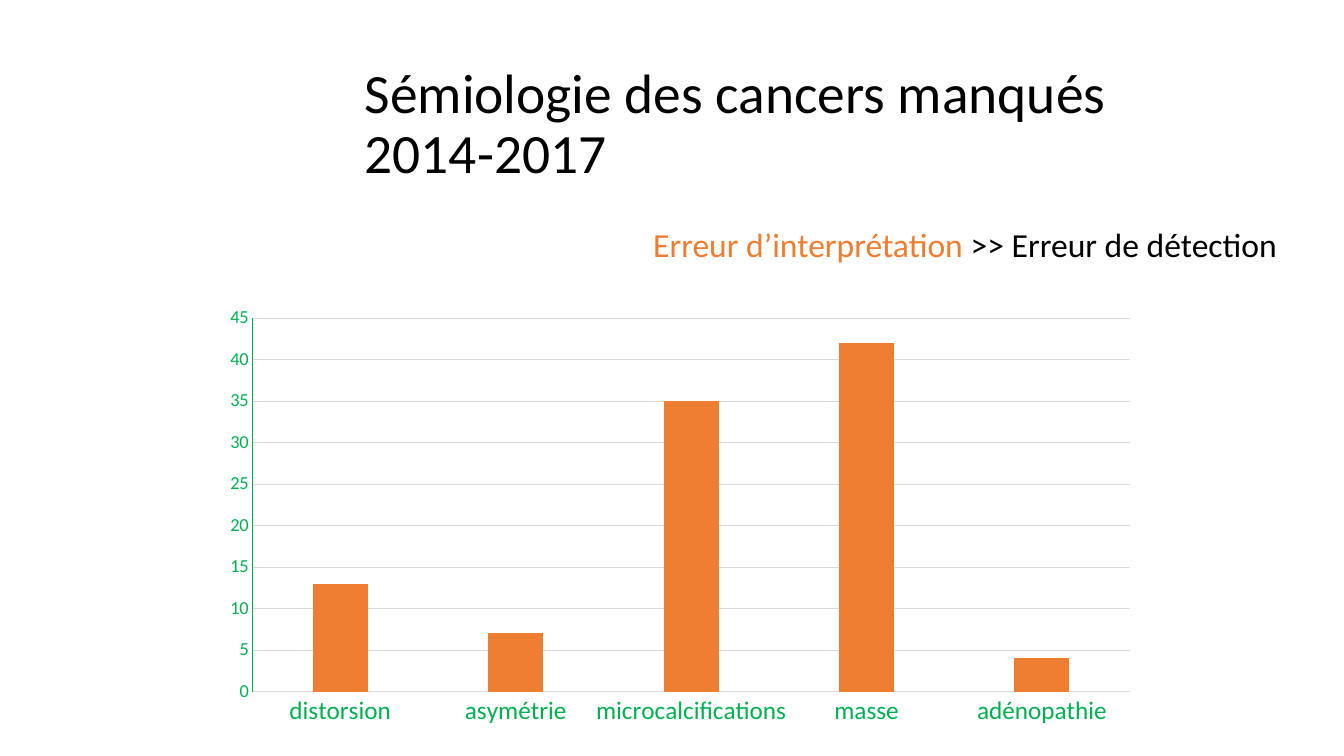
from dataclasses import dataclass

from pptx import Presentation
from pptx.chart.data import CategoryChartData
from pptx.dml.color import RGBColor
from pptx.enum.chart import XL_CHART_TYPE as ChartType, XL_TICK_MARK as TickMark
from pptx.enum.text import MSO_ANCHOR as Anchor
from pptx.util import Inches, Pt


@dataclass(frozen=True)
class Theme:
    font: str = "Calibri"
    ink: str = "000000"
    accent: str = "ED7D31"
    axis: str = "00B050"
    grid: str = "D9D9D9"
    title_size: float = 39.6
    subtitle_size: float = 24
    category_size: float = 18
    value_size: float = 13.1
    line_width: float = 0.75


THEME = Theme()
WIDTH, HEIGHT = 13.33, 7.5
TITLE_BOX = (3.52, 0.6, 7.7, 1.29)
SUBTITLE_BOX = (6.38, 2.17, 6.46, 0.5)
CHART_BOX = (2.1, 2.96, 9.29, 4.33)
FINDINGS = {
    "distorsion": 13,
    "asymétrie": 7,
    "microcalcifications": 35,
    "masse": 42,
    "adénopathie": 4,
}


def color(value):
    return RGBColor.from_string(value)


def style_font(font, size, value):
    font.name = THEME.font
    font.size = Pt(size)
    font.color.rgb = color(value)


def style_line(line, value):
    line.color.rgb = color(value)
    line.width = Pt(THEME.line_width)


def add_text(slide, box, size, runs, wrap=True, anchor=Anchor.TOP, spacing=1.0):
    """Add one paragraph made of (text, colour) runs."""
    frame = slide.shapes.add_textbox(*map(Inches, box)).text_frame
    frame.word_wrap = wrap
    frame.vertical_anchor = anchor
    paragraph = frame.paragraphs[0]
    paragraph.line_spacing = spacing
    for text, value in runs:
        for index, part in enumerate(text.split("\n")):
            if index:
                paragraph.add_line_break()
            run = paragraph.add_run()
            run.text = part
            style_font(run.font, size, value)


def style_axis(axis, size, line_color):
    axis.major_tick_mark = axis.minor_tick_mark = TickMark.NONE
    style_font(axis.tick_labels.font, size, THEME.axis)
    style_line(axis.format.line, line_color)


def add_findings_chart(slide):
    data = CategoryChartData()
    data.categories = FINDINGS.keys()
    data.add_series("Series 1", FINDINGS.values())
    frame = slide.shapes.add_chart(
        ChartType.COLUMN_CLUSTERED, *map(Inches, CHART_BOX), data
    )
    chart = frame.chart
    chart.has_legend = chart.has_title = False
    style_font(chart.font, THEME.value_size, THEME.ink)
    style_axis(chart.category_axis, THEME.category_size, THEME.grid)
    values = chart.value_axis
    style_axis(values, THEME.value_size, THEME.axis)
    values.minimum_scale, values.maximum_scale, values.major_unit = 0, 45, 5
    style_line(values.major_gridlines.format.line, THEME.grid)
    plot = chart.plots[0]
    plot.vary_by_categories = False
    plot.gap_width, plot.overlap = 219, -27
    fill = plot.series[0].format.fill
    fill.solid()
    fill.fore_color.rgb = color(THEME.accent)


def main():
    presentation = Presentation()
    presentation.slide_width = Inches(WIDTH)
    presentation.slide_height = Inches(HEIGHT)
    slide = presentation.slides.add_slide(presentation.slide_layouts[6])
    add_text(
        slide, TITLE_BOX, THEME.title_size,
        [("Sémiologie des cancers manqués\n2014-2017", THEME.ink)],
        anchor=Anchor.MIDDLE, spacing=0.9,
    )
    add_findings_chart(slide)
    add_text(
        slide, SUBTITLE_BOX, THEME.subtitle_size,
        [("Erreur d’interprétation ", THEME.accent),
         (">> Erreur de détection", THEME.ink)],
        wrap=False,
    )
    presentation.save("out.pptx")


if __name__ == "__main__":
    main()
